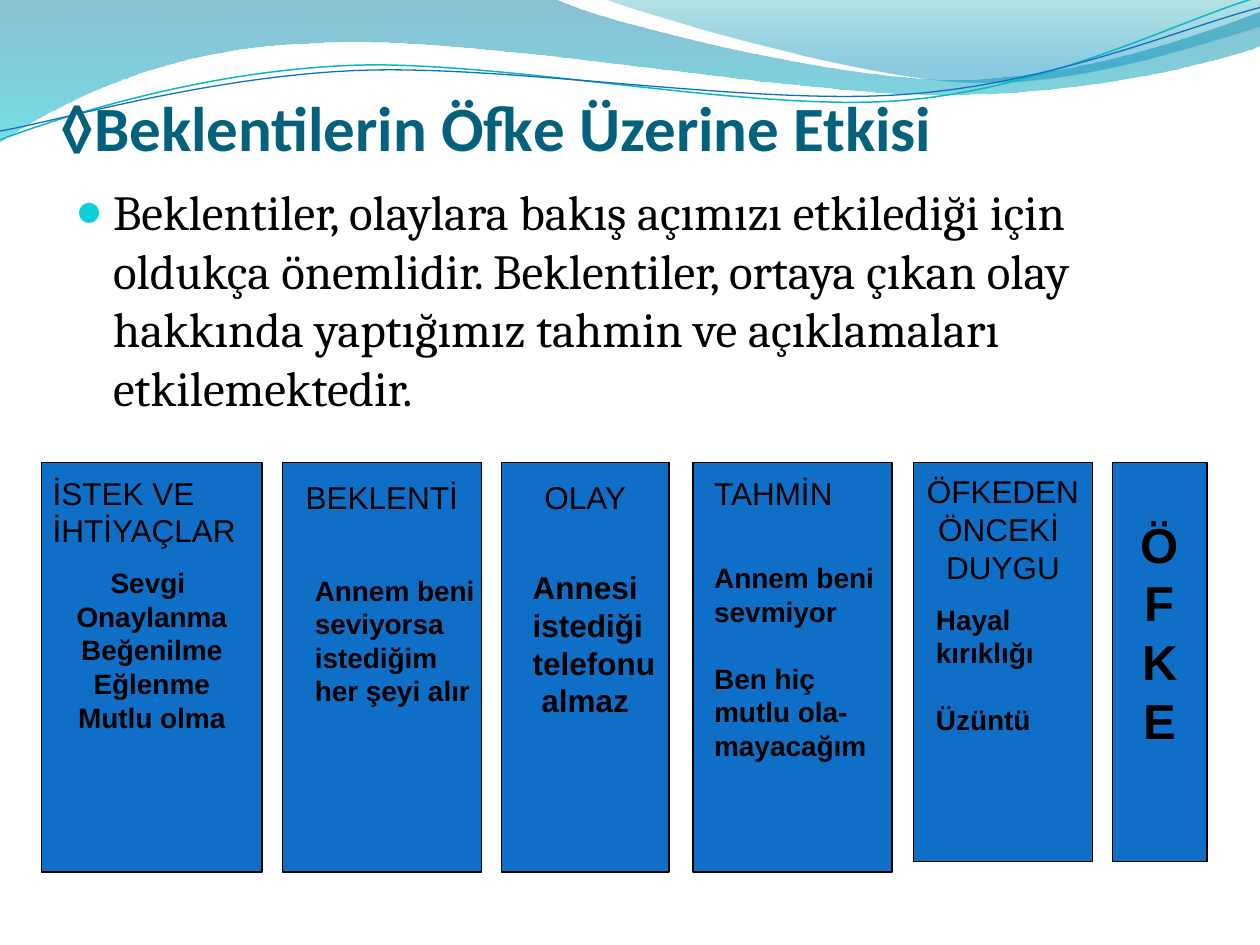
from lxml import etree
from pptx import Presentation
from pptx import util as u
from pptx.dml.color import RGBColor
from pptx.enum import shapes, text
from pptx.oxml.ns import qn

BLUE, BLACK = "0F6FC6", "000000"

# Waves: start point, then cubic curves of three points or straight points
BAND = [(0, 0), (4.4, -0.01),
        (4.76, 0.17, 6.64, 0.63, 7.58, 0.63), (8.53, 0.63, 9.58, 0.26, 10, 0.09),
        (10.01, 0.36),
        (9.83, 0.44, 8.7, 0.76, 7.46, 0.75), (6.22, 0.75, 3.82, 0.28, 2.57, 0.34),
        (1.29, 0.36, 0.46, 0.83, -0.01, 1.13), (0, 0)]
CREST = [(4.79, -0.01), (5.09, 0.11, 6.82, 0.62, 7.69, 0.65),
         (8.56, 0.69, 9.61, 0.32, 10, 0.21), (10, 0), (4.79, -0.01)]
TEAL_LINE = [(0, 1.11), (0.48, 0.93, 1.58, 0.57, 2.77, 0.52),
             (3.95, 0.47, 5.93, 0.89, 7.13, 0.8), (8.33, 0.71, 9.38, 0.15, 9.98, -0.02)]
BLUE_LINE = [(0, 1.04), (0.47, 0.96, 1.64, 0.61, 2.83, 0.56),
             (4.03, 0.51, 5.97, 0.84, 7.17, 0.75), (8.36, 0.67, 9.41, 0.21, 10, 0.06)]

# Cards: left, width, height, top inset, size, bold, lines
CARDS = [
    (0.33, 1.75, 3.25, 0.82, 16, True,
     ["Sevgi ", "Onaylanma", "Beğenilme", "Eğlenme", "Mutlu olma"]),
    (2.24, 1.58, 3.25, 0.12, 18, False, ["BEKLENTİ"]),
    (3.98, 1.33, 3.25, 0.12, 18, False, ["OLAY"]),
    (5.5, 1.58, 3.25, 0.1, 18, False, []),
    (7.25, 1.42, 3.17, 0.08, 18, False, ["ÖFKEDEN", "ÖNCEKİ ", "DUYGU"]),
    (8.83, 0.75, 3.17, 0.41, 28, True, ["Ö", "F", "K", "E"]),
]

# Notes: left, top, width, height, size, bold, wrap, groups of lines
NOTES = [
    (0.32, 3.71, 2.6, 0.7, 18, False, True, [["İSTEK VE", "İHTİYAÇLAR"]]),
    (2.4, 4.5, 1.52, 1.44, 16, True, True,
     [["Annem beni seviyorsa", "istediğim her şeyi alır"]]),
    (4.13, 4.46, 1.17, 1.3, 18, True, False,
     [["Annesi", "istediği", "telefonu", " almaz"]]),
    (5.57, 3.71, 1.16, 0.4, 18, False, False, [["TAHMİN"]]),
    (5.57, 4.4, 1.47, 1.97, 16, True, True,
     [["Annem beni", "sevmiyor"], ["Ben hiç", "mutlu ola-", "mayacağım"]]),
    (7.33, 4.73, 1.37, 1.44, 16, True, True,
     [["Hayal", "kırıklığı"], ["Üzüntü"]]),
]


def rgb(code):
    return RGBColor.from_string(code)


def add_run(para, words, size, face="Arial", color=BLACK, bold=False):
    run = para.add_run()
    run.text = words
    font = run.font
    font.size, font.name, font.bold = u.Pt(size), face, bold
    font.color.rgb = rgb(color)


def add_lines(frame, groups, size, bold, align):
    """One paragraph a line, with a line's gap between groups."""
    para = None
    for group in groups:
        for row, words in enumerate(group):
            gap = para is not None and row == 0
            para = frame.add_paragraph() if para is not None else frame.paragraphs[0]
            para.alignment = align
            if gap:
                para.space_before = u.Pt(size * 1.2)
            add_run(para, words, size, bold=bold)


def add_path(slide, steps, close):
    """Draw the end points as a freeform, then bend its curved steps."""
    ends = [(u.Inches(s[-2]), u.Inches(s[-1])) for s in steps]
    pen = slide.shapes.build_freeform(*ends[0], scale=1.0)
    pen.add_line_segments(ends[1:], close=close)
    form = pen.convert_to_shape()
    form.shadow.inherit = False
    lines = list(form._element.iter(qn("a:lnTo")))
    for line, step in zip(lines, steps[1:]):
        if len(step) == 6:
            line.tag = qn("a:cubicBezTo")
            for i in (0, 2):
                dot = etree.Element(qn("a:pt"))
                dot.set("x", str(u.Inches(step[i]) - form.left))
                dot.set("y", str(u.Inches(step[i + 1]) - form.top))
                line.insert(i // 2, dot)
    return form


def add_wave(slide, steps, stops):
    form = add_path(slide, steps, True)
    form.line.fill.background()
    form.fill.gradient()
    form.fill.gradient_angle = 270
    for stop, (place, color, alpha) in zip(form.fill.gradient_stops, stops):
        stop.position = place
        stop.color.rgb = rgb(color)
    tags = form._element.spPr.iter(qn("a:srgbClr"))
    for tag, (_, _, alpha) in zip(list(tags), stops):
        etree.SubElement(tag, qn("a:alpha")).set("val", str(alpha * 1000))


def add_curve(slide, steps, color, width):
    form = add_path(slide, steps, False)
    form.fill.background()
    form.line.color.rgb = rgb(color)
    form.line.width = u.Pt(width)


def set_title(slide):
    title = slide.shapes.title
    title.left, title.top = u.Inches(0.48), u.Inches(0.11)
    title.width, title.height = u.Inches(9.02), u.Inches(1.2)
    frame = title.text_frame
    frame.auto_size, frame.word_wrap = text.MSO_AUTO_SIZE.NONE, True
    frame.vertical_anchor = text.MSO_ANCHOR.BOTTOM
    frame.margin_left = frame.margin_right = frame.margin_bottom = 0
    frame.margin_top = u.Inches(0.05)
    para = frame.paragraphs[0]
    para.alignment = text.PP_ALIGN.LEFT
    add_run(para, "◊Beklentilerin Öfke Üzerine Etkisi", 36, "Calibri", "04617B", True)
    add_run(para, " ", 40, "Calibri", "04617B")
    slide.shapes._spTree.append(title._element)  # in front of the waves


def add_bullet(slide, words):
    box = slide.shapes.add_textbox(*map(u.Inches, (0.5, 1.39, 9, 5.24)))
    box.text_frame.word_wrap = True
    para = box.text_frame.paragraphs[0]
    props = para._p.get_or_add_pPr()
    props.set("marL", str(u.Inches(0.3)))
    props.set("indent", str(u.Inches(-0.3)))
    color = etree.SubElement(props, qn("a:buClr"))
    etree.SubElement(color, qn("a:srgbClr")).set("val", "0BD0D9")
    etree.SubElement(props, qn("a:buSzPct")).set("val", "95000")
    etree.SubElement(props, qn("a:buFont")).set("typeface", "Arial")
    etree.SubElement(props, qn("a:buChar")).set("char", "●")
    add_run(para, words, 28, "Cambria")


def add_card(slide, left, width, height, inset, size, bold, lines):
    card = slide.shapes.add_shape(shapes.MSO_SHAPE.RECTANGLE,
                                  *map(u.Inches, (left, 3.67, width, height)))
    card.shadow.inherit = False
    card.fill.solid()
    card.fill.fore_color.rgb = rgb(BLUE)
    card.line.color.rgb = rgb(BLACK)
    card.line.width = u.Pt(0.75)
    frame = card.text_frame
    frame.word_wrap = False
    frame.vertical_anchor = text.MSO_ANCHOR.TOP
    frame.margin_top = u.Inches(inset)
    add_lines(frame, [lines], size, bold, text.PP_ALIGN.CENTER)


def add_note(slide, left, top, width, height, size, bold, wrap, groups):
    box = slide.shapes.add_textbox(*map(u.Inches, (left, top, width, height)))
    frame = box.text_frame
    frame.word_wrap = wrap
    frame.auto_size = text.MSO_AUTO_SIZE.SHAPE_TO_FIT_TEXT
    add_lines(frame, groups, size, bold, text.PP_ALIGN.LEFT)


def main():
    deck = Presentation()
    deck.slide_width, deck.slide_height = u.Inches(10), u.Inches(7.5)
    slide = deck.slides.add_slide(deck.slide_layouts[5])

    # Waves along the top
    add_wave(slide, BAND, [(0, "0074A1", 45), (1, "00C6CF", 55)])
    add_wave(slide, CREST, [(0, "00A1A9", 30), (0.8, "008BBF", 45)])
    add_curve(slide, TEAL_LINE, "0AB8BF", 0.85)
    add_curve(slide, BLUE_LINE, BLUE, 0.75)

    # Title and statement
    set_title(slide)
    add_bullet(slide, "Beklentiler, olaylara bakış açımızı etkilediği için oldukça "
                      "önemlidir. Beklentiler, ortaya çıkan olay hakkında yaptığımız "
                      "tahmin ve açıklamaları etkilemektedir.")

    # Steps that lead to anger
    for card in CARDS:
        add_card(slide, *card)
    for note in NOTES:
        add_note(slide, *note)
    deck.save("out.pptx")


if __name__ == "__main__":
    main()
